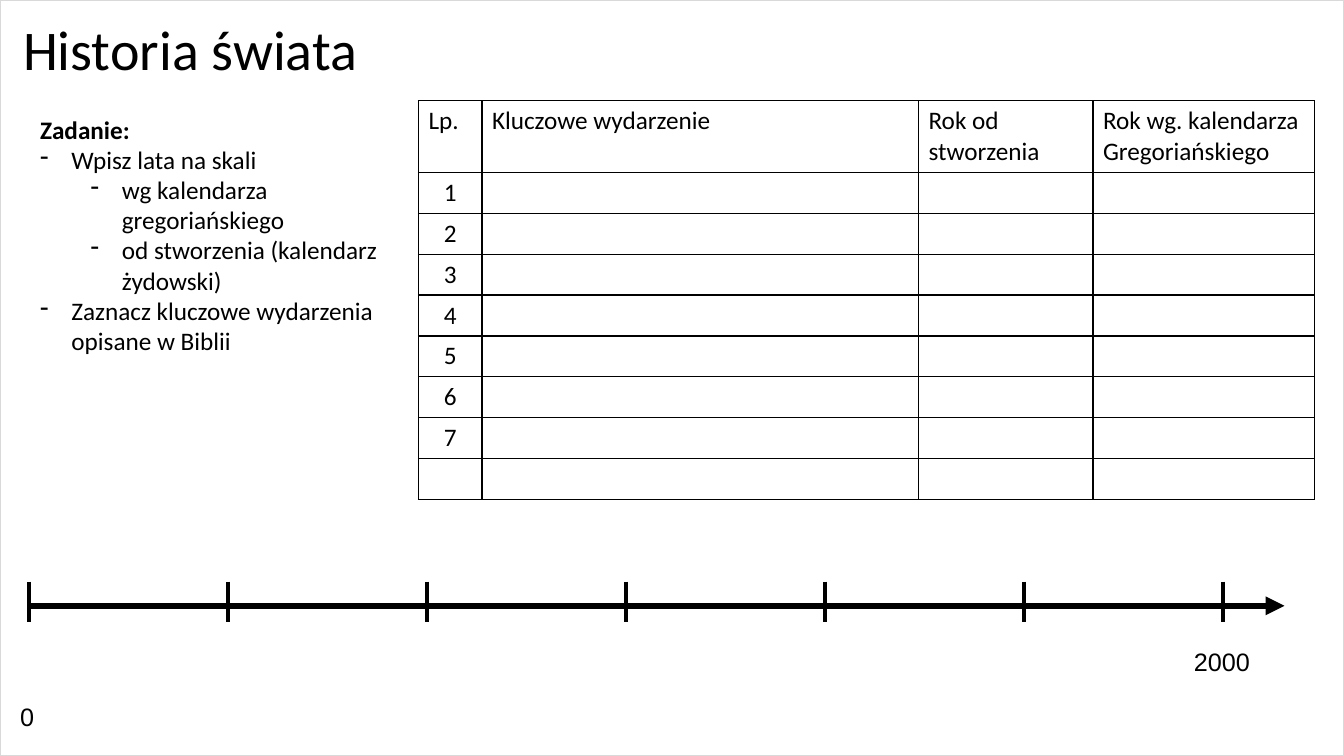
"""Build the world history worksheet slide with a task list, table and timeline."""
from lxml import etree
from pptx import Presentation
from pptx.dml.color import RGBColor
from pptx.enum.shapes import MSO_CONNECTOR, MSO_SHAPE
from pptx.enum.text import MSO_ANCHOR, MSO_AUTO_SIZE, PP_ALIGN
from pptx.oxml.ns import qn
from pptx.util import Inches, Pt

STRAIGHT = MSO_CONNECTOR.STRAIGHT
RECTANGLE = MSO_SHAPE.RECTANGLE
CENTER, LEFT = PP_ALIGN.CENTER, PP_ALIGN.LEFT
MIDDLE, TOP = MSO_ANCHOR.MIDDLE, MSO_ANCHOR.TOP
NO_FIT = MSO_AUTO_SIZE.NONE
COLORS = {"ink": "000000", "paper": "FFFFFF", "frame": "D9D9D9"}

HEADERS = ["Lp.", "Kluczowe wydarzenie", "Rok od stworzenia",
           "Rok wg. kalendarza Gregoriańskiego"]
COLUMN_WIDTHS = [0.63, 4.33, 1.73, 2.2]
ROW_HEIGHTS = [0.7] + [0.405] * 8
EVENT_COUNT = 7
TASKS = [
    (0, "Wpisz lata na skali"),
    (1, "wg kalendarza gregoriańskiego"),
    (1, "od stworzenia (kalendarz żydowski)"),
    (0, "Zaznacz kluczowe wydarzenia opisane w Biblii"),
]
TICK_COUNT, TICK_START, TICK_STEP = 7, 0.29, 1.973


def color(name):
    return RGBColor.from_string(COLORS[name])


def write(para, text, size=18, font="Calibri", bold=False, align=LEFT):
    para.alignment = align
    span = para.add_run()
    span.text = text
    formats = {"size": Pt(size), "name": font, "bold": bold}
    for key, value in formats.items():
        setattr(span.font, key, value)
    span.font.color.rgb = color("ink")


def add_text_box(page, bounds, anchor=TOP, wrap=True, inset=None):
    frame = page.shapes.add_textbox(*map(Inches, bounds)).text_frame
    formats = {"word_wrap": wrap, "vertical_anchor": anchor, "auto_size": NO_FIT}
    if inset is not None:
        for side in ("left", "top", "right", "bottom"):
            formats[f"margin_{side}"] = Inches(inset)
    for key, value in formats.items():
        setattr(frame, key, value)
    return frame


def add_frame(page, deck):
    frame = page.shapes.add_shape(RECTANGLE, 0, 0, deck.slide_width, deck.slide_height)
    frame.shadow.inherit = False
    frame.fill.solid()
    frame.fill.fore_color.rgb = color("paper")
    frame.line.color.rgb = color("frame")
    frame.line.width = Pt(1)


def add_title(page, text):
    para = add_text_box(page, (0.13, 0.13, 12.99, 0.78), MIDDLE).paragraphs[0]
    para.line_spacing = 0.9
    write(para, text, size=40)


def add_line(page, start, end, width, arrow=False):
    line = page.shapes.add_connector(STRAIGHT, *map(Inches, start + end))
    line.line.color.rgb = color("ink")
    line.line.width = Pt(width)
    if arrow:
        etree.SubElement(line.line._get_or_add_ln(), qn("a:tailEnd"), type="triangle")
    etree.SubElement(line._element.spPr, qn("a:effectLst"))


def add_year(page, bounds, text):
    frame = add_text_box(page, bounds, MIDDLE, wrap=False, inset=0.03)
    write(frame.paragraphs[0], text, font="Arial", align=CENTER)


def add_timeline(page):
    for index in range(TICK_COUNT):
        left = TICK_START + index * TICK_STEP
        add_line(page, (left, 5.77), (left, 6.17), 3)
    add_line(page, (0.3, 6.01), (12.74, 6.01), 4.5, arrow=True)
    add_year(page, (11.81, 6.38, 0.62, 0.36), "2000")
    add_year(page, (0.17, 6.93, 0.2, 0.36), "0")


def add_borders(cell):
    properties = cell._tc.get_or_add_tcPr()
    for index, side in enumerate(("lnL", "lnR", "lnT", "lnB")):
        border = etree.Element(qn(f"a:{side}"), w=str(Pt(1)))
        fill = etree.SubElement(border, qn("a:solidFill"))
        etree.SubElement(fill, qn("a:srgbClr"), val=COLORS["ink"])
        properties.insert(index, border)


def add_event_table(page):
    bounds = (4.15, 1, sum(COLUMN_WIDTHS), sum(ROW_HEIGHTS))
    table = page.shapes.add_table(
        len(ROW_HEIGHTS), len(COLUMN_WIDTHS), *map(Inches, bounds)).table
    table.first_row = table.horz_banding = False
    for column, width in zip(table.columns, COLUMN_WIDTHS):
        column.width = Inches(width)
    for row, height in zip(table.rows, ROW_HEIGHTS):
        row.height = Inches(height)
    for cell in table.iter_cells():
        cell.fill.background()
        add_borders(cell)
    for index, header in enumerate(HEADERS):
        write(table.cell(0, index).text_frame.paragraphs[0], header)
    for number in range(1, EVENT_COUNT + 1):
        para = table.cell(number, 0).text_frame.paragraphs[0]
        write(para, str(number), align=CENTER)


def add_task_list(page):
    frame = add_text_box(page, (0.3, 1.08, 3.68, 2.52))
    write(frame.paragraphs[0], "Zadanie:", bold=True)
    for level, text in TASKS:
        para = frame.add_paragraph()
        para.level = level
        write(para, text)
        properties = para._p.get_or_add_pPr()
        properties.set("marL", str(Inches(0.31 + 0.5 * level)))
        properties.set("indent", str(Inches(-0.31)))
        etree.SubElement(properties, qn("a:buChar"), char="-")


def main():
    deck = Presentation()
    deck.slide_width, deck.slide_height = Inches(13.33), Inches(7.5)
    page = deck.slides.add_slide(deck.slide_layouts[6])
    add_frame(page, deck)
    add_title(page, "Historia świata")
    add_timeline(page)
    add_event_table(page)
    add_task_list(page)
    deck.save("out.pptx")


if __name__ == "__main__":
    main()
